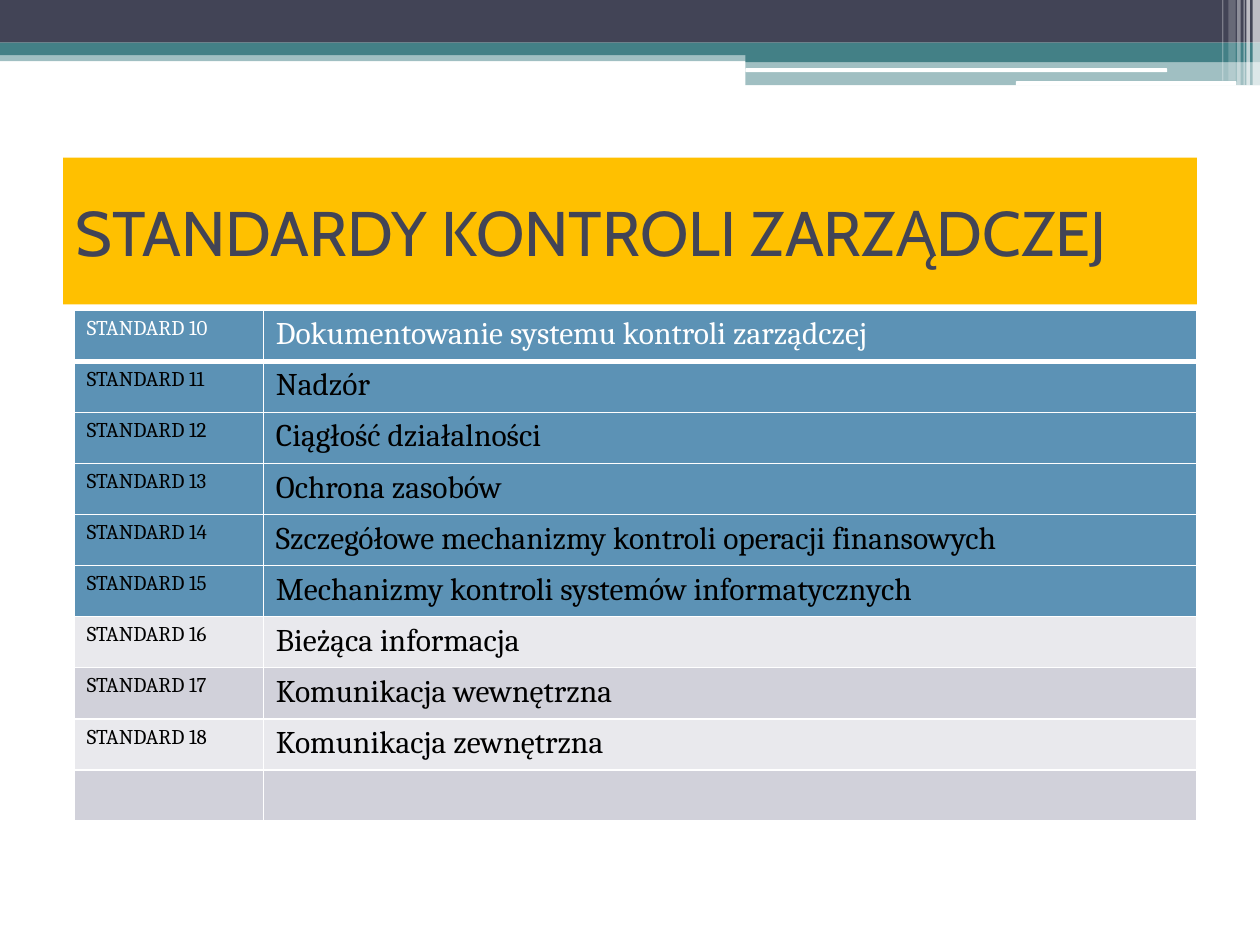
from dataclasses import dataclass

import lxml.etree
import pptx
import pptx.util
from pptx.dml.color import RGBColor
from pptx.enum.shapes import MSO_SHAPE
from pptx.enum.text import MSO_ANCHOR, MSO_AUTO_SIZE, PP_ALIGN
from pptx.oxml.ns import qn

Pt = pptx.util.Pt


@dataclass(frozen=True)
class Theme:
    navy: str = "424456"
    teal: str = "438086"
    white: str = "FFFFFF"
    black: str = "000000"
    amber: str = "FFC000"
    blue: str = "5C92B5"
    light_band: str = "E9E9ED"
    dark_band: str = "D1D1DA"
    title_font: str = "Cabin"
    body_font: str = "Cambria"
    title_size: int = 36
    label_size: int = 12
    name_size: int = 18


THEME = Theme()

STANDARD_NAMES = [
    "Dokumentowanie systemu kontroli zarządczej",
    "Nadzór",
    "Ciągłość działalności",
    "Ochrona zasobów",
    "Szczegółowe mechanizmy kontroli operacji finansowych",
    "Mechanizmy kontroli systemów informatycznych",
    "Bieżąca informacja",
    "Komunikacja wewnętrzna",
    "Komunikacja zewnętrzna",
]
FIRST_STANDARD = 10
BLUE_ROWS = 6


def set_fill(fill, color, opacity=100):
    fill.solid()
    fill.fore_color.rgb = RGBColor.from_string(color)
    if opacity < 100:
        color_element = fill._xPr.find(qn("a:solidFill"))[0]
        alpha = lxml.etree.SubElement(color_element, qn("a:alpha"))
        alpha.set("val", str(opacity * 1000))


def style_text(paragraph, font_name, size, color):
    font = paragraph.font
    font.name = font_name
    font.size = Pt(size)
    font.color.rgb = RGBColor.from_string(color)


def add_bar(slide, box, color, opacity=100, rounded=False):
    kind = MSO_SHAPE.ROUNDED_RECTANGLE if rounded else MSO_SHAPE.RECTANGLE
    shape = slide.shapes.add_shape(kind, *(Pt(length) for length in box))
    shape.shadow.inherit = False
    shape.line.fill.background()
    set_fill(shape.fill, color, opacity)


def add_header_band(slide, left, top, width):
    # Full-width bars
    add_bar(slide, (left, top + 28.8, width, 6.2), THEME.teal, 50)
    add_bar(slide, (left, top, width, 24.4), THEME.navy)
    add_bar(slide, (left, top + 24.4, width, 7.2), THEME.teal)

    # Stepped block on the right
    step_width = 294
    step_left = left + width - step_width
    add_bar(slide, (step_left, top + 28.3, step_width, 7.2), THEME.teal)
    add_bar(slide, (step_left, top + 35.3, step_width, 13.4), THEME.teal, 50)
    add_bar(slide, (step_left, top + 39, 241, 2.2), THEME.white, rounded=True)
    add_bar(slide, (left + 580.5, top + 46.4, 126, 2.6), THEME.white, rounded=True)

    # Translucent vertical stripes: distance from right edge, width, height, opacity
    stripes = [
        (4.2, 4.2, 48.8, 65),
        (7.8, 2, 48.8, 65),
        (9.4, 0.7, 48.8, 60),
        (13, 2, 48.8, 40),
        (18, 4.2, 46.1, 20),
        (21.6, 0.7, 46.1, 30),
    ]
    for offset, stripe_width, height, opacity in stripes:
        box = (left + width - offset, top, stripe_width, height)
        add_bar(slide, box, THEME.white, opacity)


def place_title(slide, left, top, width, height):
    title = slide.shapes.title
    title.left, title.top = Pt(left), Pt(top)
    title.width, title.height = Pt(width), Pt(height)
    set_fill(title.fill, THEME.amber)
    frame = title.text_frame
    frame.text = "STANDARDY KONTROLI ZARZĄDCZEJ"
    frame.word_wrap = True
    frame.auto_size = MSO_AUTO_SIZE.NONE
    frame.vertical_anchor = MSO_ANCHOR.MIDDLE
    paragraph = frame.paragraphs[0]
    paragraph.alignment = PP_ALIGN.LEFT
    style_text(paragraph, THEME.title_font, THEME.title_size, THEME.navy)


def set_borders(cell, bottom_width):
    properties = cell._tc.get_or_add_tcPr()
    for side, width in (("L", 1), ("R", 1), ("T", 1), ("B", bottom_width)):
        line = lxml.etree.SubElement(properties, qn(f"a:ln{side}"))
        line.set("w", str(Pt(width)))
        solid = lxml.etree.SubElement(line, qn("a:solidFill"))
        lxml.etree.SubElement(solid, qn("a:srgbClr")).set("val", THEME.white)


def row_color(index):
    if index < BLUE_ROWS:
        return THEME.blue
    return THEME.dark_band if index % 2 else THEME.light_band


def add_standards_table(slide, left, top, width, height):
    rows = [
        (f"STANDARD {number}", name)
        for number, name in enumerate(STANDARD_NAMES, FIRST_STANDARD)
    ]
    rows.append(("", ""))
    frame = slide.shapes.add_table(
        len(rows), 2, Pt(left), Pt(top), Pt(width), Pt(height)
    )
    table = frame.table
    label_width = 108
    table.columns[0].width = Pt(label_width)
    table.columns[1].width = Pt(width - label_width)

    for row_index, texts in enumerate(rows):
        table.rows[row_index].height = Pt(height / len(rows))
        is_header = row_index == 0
        text_color = THEME.white if is_header else THEME.black
        for column, size in enumerate((THEME.label_size, THEME.name_size)):
            cell = table.cell(row_index, column)
            set_borders(cell, bottom_width=3 if is_header else 1)
            set_fill(cell.fill, row_color(row_index))
            cell.text = texts[column]
            paragraph = cell.text_frame.paragraphs[0]
            style_text(paragraph, THEME.body_font, size, text_color)
            paragraph.font.bold = False


def main():
    presentation = pptx.Presentation()
    presentation.slide_width, presentation.slide_height = Pt(720), Pt(540)
    slide = presentation.slides.add_slide(presentation.slide_layouts[5])
    add_header_band(slide, 0, 0, 720)
    place_title(slide, 36, 90, 648, 84)
    add_standards_table(slide, 42.5, 177.2, 641.5, 292)
    presentation.save("out.pptx")


if __name__ == "__main__":
    main()
